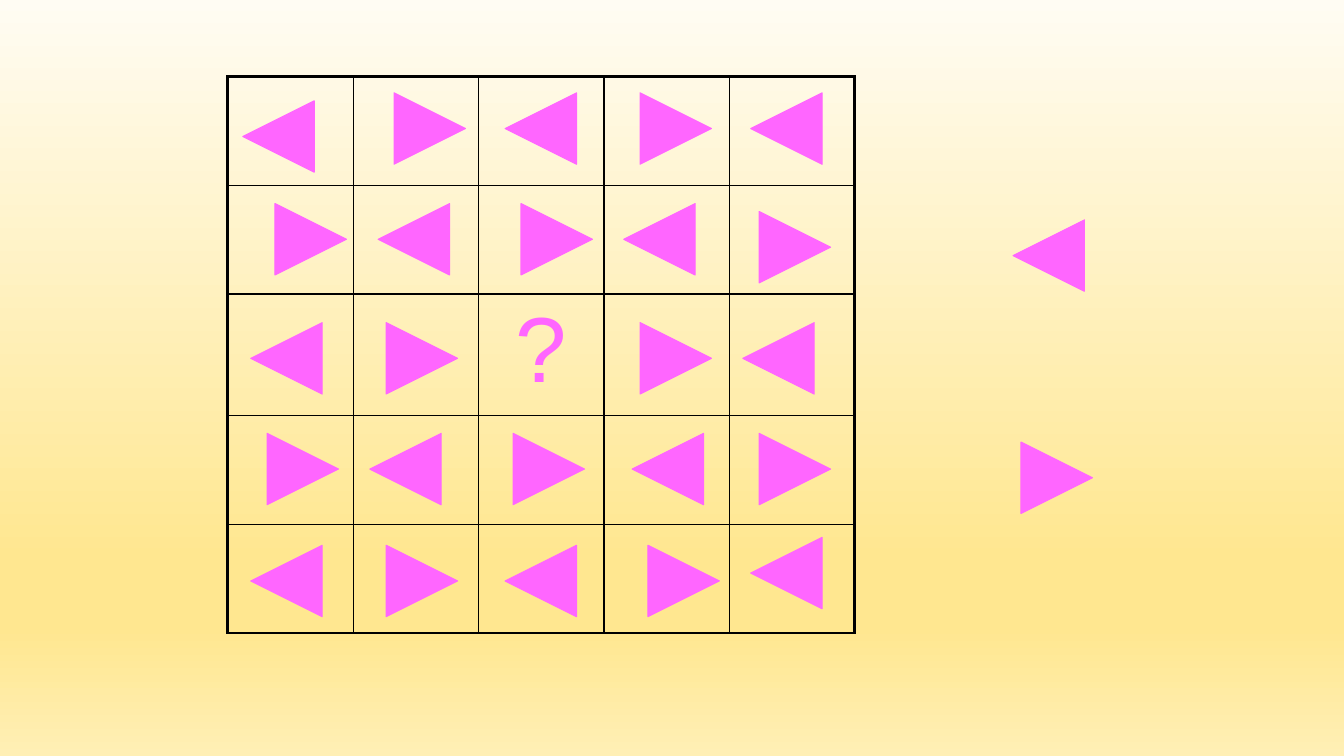
from dataclasses import dataclass

from lxml import etree
from pptx import Presentation
from pptx.dml.color import RGBColor
from pptx.enum.shapes import MSO_SHAPE
from pptx.enum.text import PP_ALIGN
from pptx.oxml.ns import qn
from pptx.util import Cm, Pt

TRIANGLE = MSO_SHAPE.ISOSCELES_TRIANGLE
CENTER = PP_ALIGN.CENTER


@dataclass(frozen=True)
class Theme:
    pink: str = "FF66FF"
    grid: str = "000000"
    backdrop: tuple = ((0, "FFFCF3"), (74, "FFE790"), (83, "FFE790"), (100, "FFEFB5"))
    font: str = "Arial"
    question_size: float = 66
    outer_line: float = 2.25
    inner_line: float = 1
    triangle_line: float = 0.75


@dataclass(frozen=True)
class Box:
    left: float
    top: float
    width: float
    height: float


THEME = Theme()
COUNT = 5
SIDE = 1.8
BOARD = Box(5.74, 1.93, 15.8, 14.02)
ANSWERS = Box(25.53, 5.54, 2, 7.4)
ROW_HEIGHTS = (2.74, 2.74, 3.06, 2.74, 2.74)
QUESTION_CELL = (2, 2)
TRIANGLE_TOPS = (0.41, 3.2, 6.2, 8.99, 11.81)
TRIANGLE_LEFTS = (
    (0.38, 4.19, 6.99, 10.39, 13.18),
    (1.19, 3.79, 7.39, 9.98, 13.39),
    (0.58, 3.99, None, 10.39, 12.98),
    (0.99, 3.58, 7.19, 10.19, 13.39),
    (0.58, 3.99, 6.99, 10.59, 13.18),
)
TOP_SHIFTS = {(0, 0): 0.2, (1, 4): 0.2, (4, 4): -0.2}


def add_color(parent, color):
    return etree.SubElement(parent, qn("a:srgbClr"), val=color)


def paint_backdrop(page):
    fill = page.background.fill
    fill.gradient()
    fill.gradient_angle = 270
    stops = next(page.background._cSld.iter(qn("a:gsLst")))
    for stop in list(stops):
        stops.remove(stop)
    for percent, color in THEME.backdrop:
        stop = etree.SubElement(stops, qn("a:gs"), pos=str(percent * 1000))
        add_color(stop, color)


def add_triangle(page, left, top, points_left):
    shape = page.shapes.add_shape(TRIANGLE, Cm(left), Cm(top), Cm(SIDE), Cm(SIDE))
    shape.rotation = 270 if points_left else 90
    shape.shadow.inherit = False
    pink = RGBColor.from_string(THEME.pink)
    shape.fill.solid()
    shape.fill.fore_color.rgb = pink
    shape.line.color.rgb = pink
    shape.line.width = Pt(THEME.triangle_line)


def format_cell(cell, row, column):
    properties = cell._tc.get_or_add_tcPr()
    last = COUNT - 1
    outer_sides = {"L": column == 0, "R": column == last, "T": row == 0, "B": row == last}
    for side, is_outer in outer_sides.items():
        width = Pt(THEME.outer_line if is_outer else THEME.inner_line)
        line = etree.SubElement(properties, qn(f"a:ln{side}"), w=str(width))
        add_color(etree.SubElement(line, qn("a:solidFill")), THEME.grid)
    cell.fill.background()


def write_question(cell):
    para = cell.text_frame.paragraphs[0]
    para.alignment = CENTER
    span = para.add_run()
    span.text = "?"
    for name, value in {"name": THEME.font, "size": Pt(THEME.question_size)}.items():
        setattr(span.font, name, value)
    span.font.color.rgb = RGBColor.from_string(THEME.pink)


def add_grid(page, box):
    frame = page.shapes.add_table(
        COUNT, COUNT, Cm(box.left), Cm(box.top), Cm(box.width), Cm(box.height)
    )
    table = frame.table
    for name, value in {"first_row": False, "horz_banding": False}.items():
        setattr(table, name, value)
    for column in table.columns:
        column.width = Cm(box.width / COUNT)
    for row, height in zip(table.rows, ROW_HEIGHTS):
        row.height = Cm(height)
    for row in range(COUNT):
        for column in range(COUNT):
            format_cell(table.cell(row, column), row, column)
    write_question(table.cell(*QUESTION_CELL))


def add_pattern(page, box):
    for row, (top, lefts) in enumerate(zip(TRIANGLE_TOPS, TRIANGLE_LEFTS)):
        for column, left in enumerate(lefts):
            if (row, column) == QUESTION_CELL:
                continue
            shift = TOP_SHIFTS.get((row, column), 0)
            points_left = (row + column) % 2 == 0
            add_triangle(page, box.left + left, box.top + top + shift, points_left)


def add_answers(page, box):
    add_triangle(page, box.left, box.top, True)
    add_triangle(
        page, box.left + box.width - SIDE, box.top + box.height - SIDE, False
    )


def main():
    deck = Presentation()
    deck.slide_width, deck.slide_height = Cm(33.87), Cm(19.05)
    page = deck.slides.add_slide(deck.slide_layouts[6])
    paint_backdrop(page)
    add_grid(page, BOARD)
    add_pattern(page, BOARD)
    add_answers(page, ANSWERS)
    deck.save("out.pptx")


if __name__ == "__main__":
    main()
